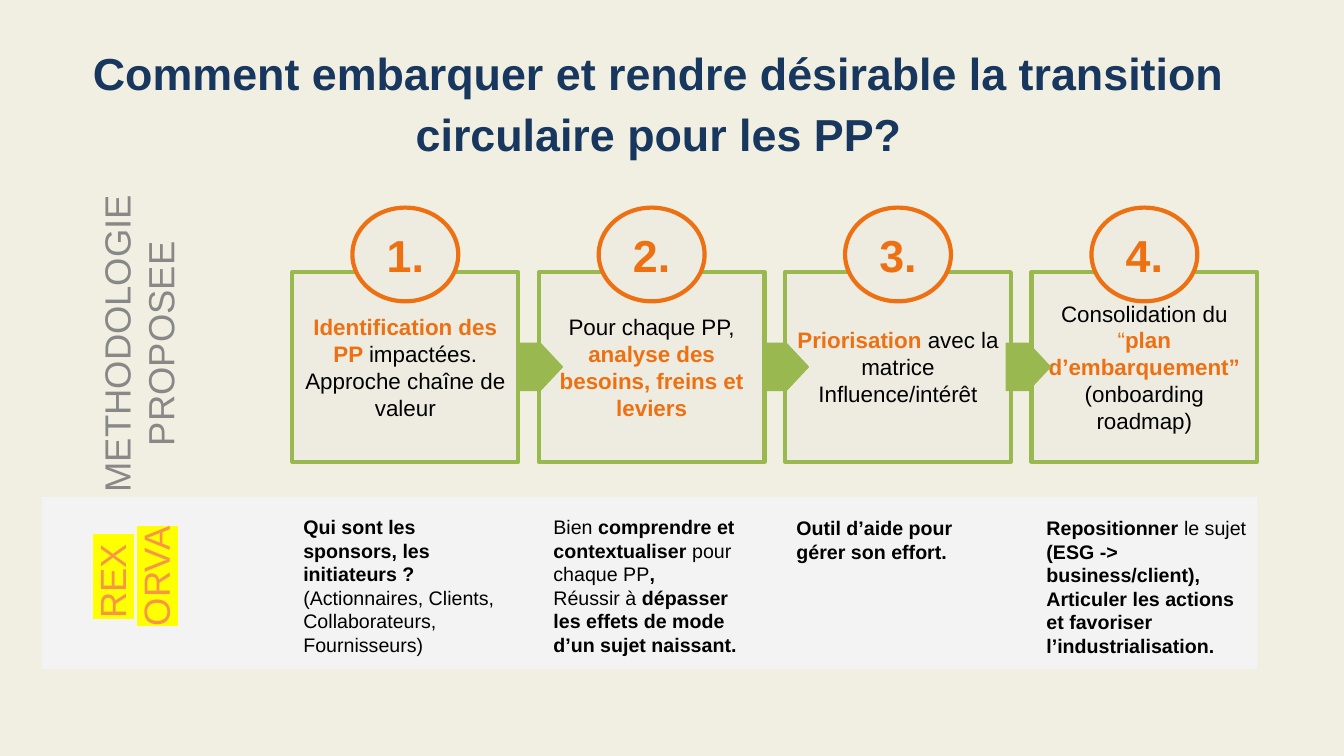
from dataclasses import dataclass

from lxml.etree import SubElement
from pptx import Presentation
from pptx.dml.color import RGBColor
from pptx.enum.shapes import MSO_SHAPE
from pptx.enum.text import MSO_ANCHOR, PP_ALIGN
from pptx.oxml.ns import qn
from pptx.util import Inches, Pt


@dataclass(frozen=True)
class Theme:
    font: str = "Arial"
    background: str = "F1EFE1"
    band: str = "F3F3F3"
    panel: str = "EEECE1"
    green: str = "99B950"
    orange: str = "ED7012"
    navy: str = "17375E"
    black: str = "000000"
    grey: str = "888888"
    amber: str = "F79646"
    yellow: str = "FFFF00"
    heading: int = 32
    label: int = 26
    step: int = 16
    note: int = 14


T = Theme()

# Run styles: (colour, bold, highlight)
PLAIN = (T.black, False, None)
BOLD = (T.black, True, None)
ACCENT = (T.orange, True, None)
ACCENT_LIGHT = (T.orange, False, None)
TITLE = (T.navy, True, None)
METHOD = (T.grey, False, None)
FEEDBACK = (T.amber, False, T.yellow)

# A text is a list of paragraphs, a paragraph is a list of (words, style)
HEADING = [[("Comment embarquer et rendre désirable la transition circulaire pour les PP?", TITLE)]]

STEPS = [
    [[("Identification des PP ", ACCENT), ("impactées.\nApproche chaîne de valeur", PLAIN)]],
    [[("Pour chaque PP, ", PLAIN), ("analyse des besoins, freins et leviers", ACCENT)]],
    [[("Priorisation ", ACCENT), ("avec la matrice Influence/intérêt", PLAIN)]],
    [[("Consolidation du ", PLAIN), ("“", ACCENT_LIGHT), ("plan", ACCENT)],
     [("d’embarquement” ", ACCENT), ("(onboarding roadmap)", PLAIN)]],
]

# (left, top, width, text)
NOTES = [
    (2.91, 5.01, 2.28, [
        [("Qui sont les sponsors, les initiateurs ?", BOLD)],
        [("(Actionnaires, Clients, Collaborateurs, Fournisseurs)", PLAIN)]]),
    (5.39, 5.01, 2.19, [
        [("Bien", PLAIN), (" comprendre et contextualiser ", BOLD),
         ("pour chaque PP", PLAIN), (",", BOLD)],
        [("Réussir à ", PLAIN), ("dépasser les effets de mode d’un sujet naissant.", BOLD)]]),
    (7.8, 5.02, 2.19, [[("Outil d’aide pour gérer son effort.", BOLD)]]),
    (10.28, 5.02, 2.19, [
        [("Repositionner ", BOLD), ("le sujet ", PLAIN),
         ("(ESG -> business/client), Articuler les actions et favoriser l’industrialisation.",
          BOLD)]]),
]
NOTE_H = 1.69

# (left, top, width, height, text), turned to read upwards
SIDE_LABELS = [
    (-0.38, 2.82, 3.61, 1.18, [[("METHODOLOGIE PROPOSEE", METHOD)]]),
    (0.25, 5.28, 1.95, 0.87, [[("REX \nORVA", FEEDBACK)]]),
]

BAND = (0.42, 4.94, 12.04, 1.69)
FIRST_LEFT, LAST_LEFT = 2.9, 10.23
STEP_TOP, STEP_W, STEP_H = 2.7, 2.24, 1.88
CIRCLE_TOP, CIRCLE_W, CIRCLE_H = 2.06, 1.05, 0.93
ARROW_LEFTS = (5.14, 7.58, 9.98)
ARROW_W, ARROW_H = 0.44, 0.47


def rgb(value):
    return RGBColor.from_string(value)


def add_run(p, words, style):
    color, bold, highlight = style
    for i, line in enumerate(words.split("\n")):
        if i:
            p.add_line_break()
        r = p.add_run()
        r.text = line
        r.font.bold = bold
        r.font.color.rgb = rgb(color)
        if highlight:
            mark = SubElement(r.font.fill._xPr, qn("a:highlight"))
            SubElement(mark, qn("a:srgbClr"), val=highlight)


def write(sp, text, size, align=PP_ALIGN.CENTER, anchor=MSO_ANCHOR.TOP, inset=0.1, spacing=None):
    tf = sp.text_frame
    tf.word_wrap = True
    tf.vertical_anchor = anchor
    tf.margin_left = tf.margin_right = tf.margin_top = tf.margin_bottom = Inches(inset)
    for i, runs in enumerate(text):
        p = tf.add_paragraph() if i else tf.paragraphs[0]
        p.alignment = align
        if spacing:
            p.line_spacing = spacing
        p.font.size = Pt(size)
        p.font.name = T.font
        for words, style in runs:
            add_run(p, words, style)


def add_box(s, kind, box, fill, line, width):
    sp = s.shapes.add_shape(kind, *map(Inches, box))
    sp.shadow.inherit = False
    sp.fill.solid()
    sp.fill.fore_color.rgb = rgb(fill)
    sp.line.color.rgb = rgb(line)
    sp.line.width = Pt(width)
    return sp


def add_text(s, box, text, size, **options):
    sp = s.shapes.add_textbox(*map(Inches, box))
    write(sp, text, size, **options)
    return sp


def add_steps(s):
    pitch = (LAST_LEFT - FIRST_LEFT) / (len(STEPS) - 1)
    lefts = [FIRST_LEFT + i * pitch for i in range(len(STEPS))]
    for left, text in zip(lefts, STEPS):
        sp = add_box(s, MSO_SHAPE.RECTANGLE, (left, STEP_TOP, STEP_W, STEP_H),
                     T.panel, T.green, 3)
        write(sp, text, T.step, anchor=MSO_ANCHOR.MIDDLE)
    for number, left in enumerate(lefts, 1):
        circle_left = left + (STEP_W - CIRCLE_W) / 2
        sp = add_box(s, MSO_SHAPE.OVAL, (circle_left, CIRCLE_TOP, CIRCLE_W, CIRCLE_H),
                     T.panel, T.orange, 3)
        write(sp, [[(f"{number}.", ACCENT)]], T.heading, anchor=MSO_ANCHOR.MIDDLE)
    arrow_top = STEP_TOP + (STEP_H - ARROW_H) / 2
    for left in ARROW_LEFTS:
        add_box(s, MSO_SHAPE.PENTAGON, (left, arrow_top, ARROW_W, ARROW_H),
                T.green, T.green, 0.75)


def main():
    prs = Presentation()
    prs.slide_width, prs.slide_height = Inches(13.33), Inches(7.5)
    s = prs.slides.add_slide(prs.slide_layouts[6])
    s.background.fill.solid()
    s.background.fill.fore_color.rgb = rgb(T.background)

    add_box(s, MSO_SHAPE.RECTANGLE, BAND, T.band, T.band, 0.75)
    add_text(s, (0.3, 0.37, 12.47, 1.75), HEADING, T.heading, inset=0, spacing=1.15)
    add_steps(s)
    for *box, text in SIDE_LABELS:
        add_text(s, box, text, T.label).rotation = 270
    for left, top, width, text in NOTES:
        add_text(s, (left, top, width, NOTE_H), text, T.note, align=PP_ALIGN.LEFT)

    prs.save("out.pptx")


if __name__ == "__main__":
    main()
